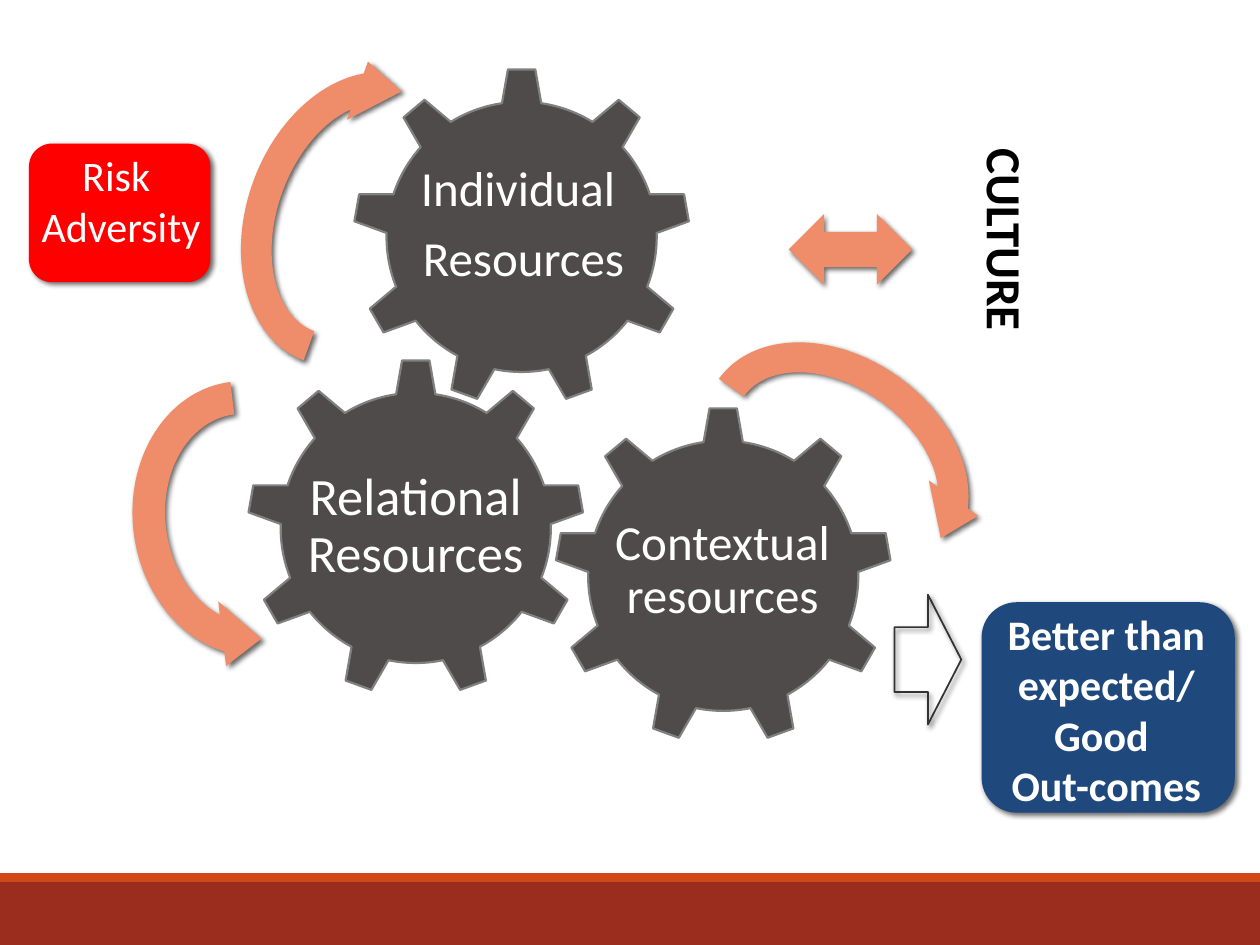
from dataclasses import dataclass
from typing import Optional

from lxml.etree import SubElement
from pptx import Presentation
from pptx.dml.color import RGBColor
from pptx.enum.shapes import MSO_SHAPE as Kind
from pptx.enum.text import MSO_ANCHOR, MSO_AUTO_SIZE, PP_ALIGN
from pptx.oxml.ns import qn
from pptx.util import Inches, Pt

HEX = {
    "brick": "9B2D1F", "orange": "D34817", "gear": "4F4B4B", "edge": "808080",
    "peach": "EF8C6A", "red": "FF0000", "navy": "1F497D", "ink": "353232",
    "white": "FFFFFF", "black": "000000",
}
GEAR = 2.68


@dataclass
class Part:
    kind: Kind
    box: tuple
    fill: Optional[str] = None
    line: Optional[str] = None
    width: float = 1
    turn: float = 0
    flip: bool = False
    shade: bool = True


@dataclass
class Label:
    box: tuple
    lines: tuple
    size: int = 24
    color: str = "white"
    bold: bool = False
    gear: bool = False
    vert: bool = False


def paint(name: str) -> RGBColor:
    return RGBColor.from_string(HEX[name])


def cast(shape) -> None:
    """Add a soft shadow to the lower right."""
    effects = shape._element.spPr.find(qn("a:effectLst"))
    outer = SubElement(effects, qn("a:outerShdw"), blurRad=str(Pt(3)),
                       dist=str(Pt(2)), dir=str(45 * 60000), rotWithShape="0")
    color = SubElement(outer, qn("a:srgbClr"), val=HEX["black"])
    SubElement(color, qn("a:alpha"), val="60000")


def draw(slide, part: Part) -> None:
    shape = slide.shapes.add_shape(part.kind, *map(Inches, part.box))
    shape.rotation = part.turn
    if part.flip:
        shape._element.spPr.xfrm.set("flipH", "1")
    if part.fill:
        shape.fill.solid()
        shape.fill.fore_color.rgb = paint(part.fill)
    else:
        shape.fill.background()
    if part.line:
        shape.line.color.rgb = paint(part.line)
        shape.line.width = Pt(part.width)
    else:
        shape.line.fill.background()
    shape.shadow.inherit = False
    if part.shade:
        cast(shape)


def write(slide, label: Label) -> None:
    frame = slide.shapes.add_textbox(*map(Inches, label.box)).text_frame
    look = {"word_wrap": True}
    if label.gear:
        look["vertical_anchor"] = MSO_ANCHOR.MIDDLE
        for side in ("left", "right", "top", "bottom"):
            look[f"margin_{side}"] = Inches(0.02)
    else:
        look["auto_size"] = MSO_AUTO_SIZE.SHAPE_TO_FIT_TEXT
    for key, value in look.items():
        setattr(frame, key, value)
    if label.vert:
        frame._txBody.bodyPr.set("vert", "vert")

    font = {"name": "Calibri", "size": Pt(label.size), "bold": label.bold}
    for i, text in enumerate(label.lines):
        para = frame.add_paragraph() if i else frame.paragraphs[0]
        para.alignment = PP_ALIGN.CENTER
        if label.gear:
            para.line_spacing = 0.9
            para.space_after = Pt(label.size * 0.35)
        run = para.add_run()
        run.text = text
        for key, value in font.items():
            setattr(run.font, key, value)
        run.font.color.rgb = paint(label.color)


def cog(left: float, top: float) -> Part:
    return Part(Kind.GEAR_9, (left, top, GEAR, GEAR), "gear", "edge", 1.25,
                shade=False)


def bend(box: tuple, turn: float, flip: bool = False) -> Part:
    return Part(Kind.CIRCULAR_ARROW, box, "peach", turn=turn, flip=flip)


ITEMS = [
    # Footer bands
    Part(Kind.RECTANGLE, (0, 7, 10, 0.5), "brick", shade=False),
    Part(Kind.RECTANGLE, (0, 6.93, 10, 0.07), "orange", shade=False),
    # Gears and their labels
    cog(4.4, 3.23),
    Label((4.7, 3.84, 2.07, 1.38), ("Contextual resources",), 28, gear=True),
    cog(1.96, 2.85),
    Label((2.17, 3.67, 2.26, 1.02), ("Relational Resources",), 30, gear=True),
    cog(2.8, 0.54),
    Label((3.12, 1.1, 2.07, 1.38), ("Individual ", "Resources"), 28, gear=True),
    # Turning arrows
    bend((1.5, 0.75, 2.64, 1.97), 290),
    bend((5.37, 2.71, 2.53, 1.93), 35.7),
    bend((0.74, 3.08, 2.44, 2.07), 263.1, flip=True),
    # Risk
    Part(Kind.ROUNDED_RECTANGLE, (0.23, 1.14, 1.44, 1.1), "red"),
    Label((-0.35, 1.14, 2.62, 0.91), ("Risk ", "Adversity")),
    # Outcomes
    Part(Kind.ROUNDED_RECTANGLE, (7.79, 4.78, 2.01, 1.67), "navy"),
    Label((7.83, 4.78, 1.9, 1.72),
          ("Better than expected/ Good ", "Out-comes"), bold=True),
    Part(Kind.RIGHT_ARROW, (7.1, 4.72, 0.53, 1.03), line="ink"),
    # Culture
    Label((7.6, 0.84, 0.67, 2.12), ("CULTURE",), 28, "black", True, vert=True),
    Part(Kind.LEFT_RIGHT_ARROW, (6.26, 1.7, 0.98, 0.56), "peach"),
]


def main() -> None:
    deck = Presentation()
    deck.slide_width, deck.slide_height = Inches(10), Inches(7.5)
    slide = deck.slides.add_slide(deck.slide_layouts[6])
    for item in ITEMS:
        if isinstance(item, Part):
            draw(slide, item)
        else:
            write(slide, item)
    deck.save("out.pptx")


if __name__ == "__main__":
    main()
